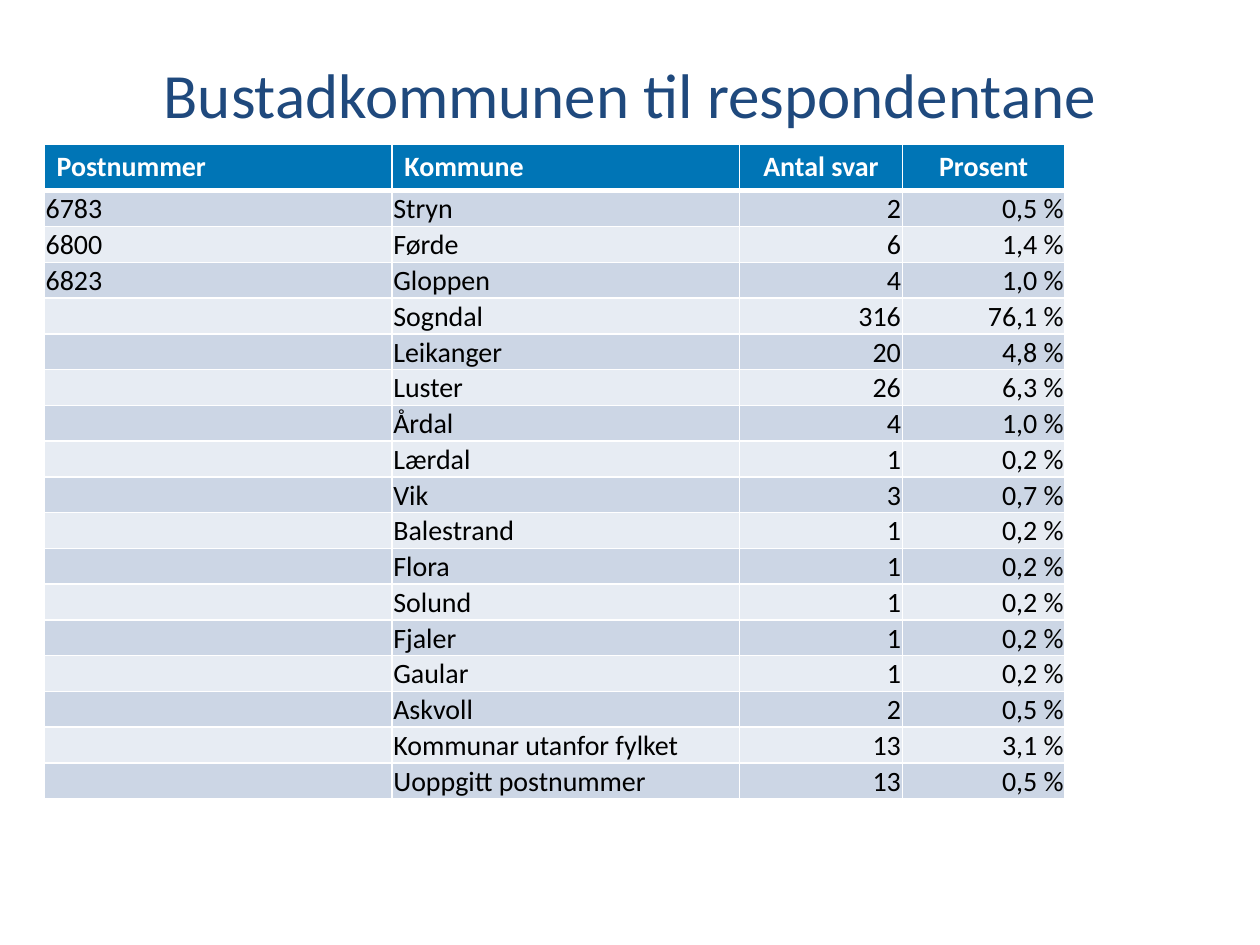
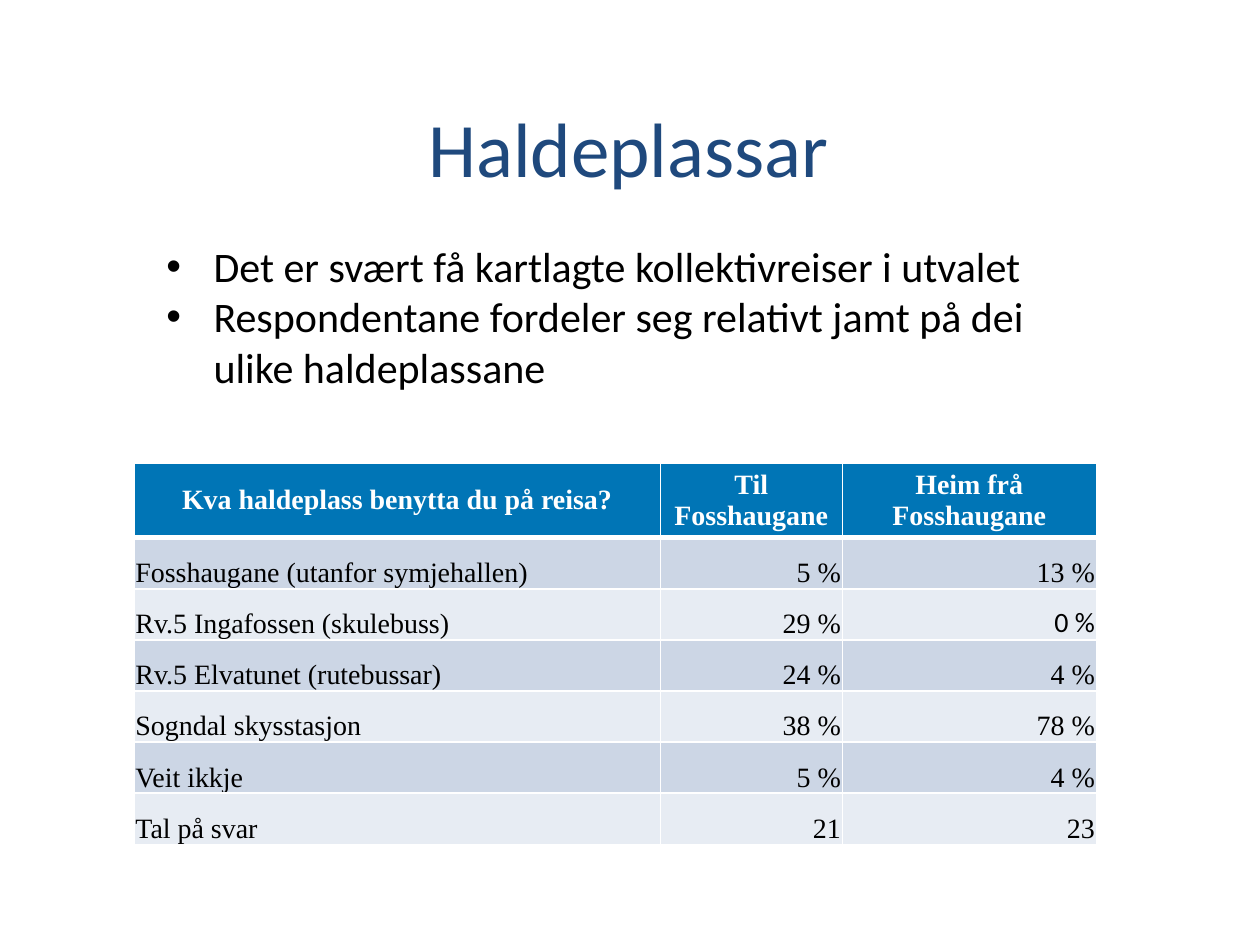
import dataclasses

import lxml.etree
import pptx
import pptx.dml.color
import pptx.enum.text
import pptx.oxml.ns
import pptx.util

Cm, Pt = pptx.util.Cm, pptx.util.Pt
ALIGN = pptx.enum.text.PP_ALIGN
ANCHOR = pptx.enum.text.MSO_ANCHOR

NAVY, BLUE, WHITE, BLACK = "1F497D", "0075B6", "FFFFFF", "000000"
BANDS = ("CCD6E5", "E7ECF3")
SANS, SERIF = "Calibri", "Times New Roman"
SIZE = 16
PAD = Cm(0.03)


@dataclasses.dataclass
class Box:
    left: float
    top: float
    width: float
    height: float


@dataclasses.dataclass
class Column:
    head: str
    width: float
    side: ALIGN = ALIGN.RIGHT
    top: ALIGN = ALIGN.CENTER


@dataclasses.dataclass
class Grid:
    left: float
    top: float
    first: float
    step: float
    face: str
    anchor: ANCHOR
    cols: list[Column]
    rows: list[tuple[str, ...]]
    faces: dict[str, str] = dataclasses.field(default_factory=dict)


TOWNS = Grid(
    0.89, 2.9, 0.88, 0.72, SANS, ANCHOR.BOTTOM,
    [
        Column("Postnummer", 7.01, ALIGN.LEFT, ALIGN.LEFT),
        Column("Kommune", 7.01, ALIGN.LEFT, ALIGN.LEFT),
        Column("Antal svar", 3.28),
        Column("Prosent", 3.28),
    ],
    [
        ("6783", "Stryn", "2", "0,5 %"),
        ("6800", "Førde", "6", "1,4 %"),
        ("6823", "Gloppen", "4", "1,0 %"),
        ("", "Sogndal", "316", "76,1 %"),
        ("", "Leikanger", "20", "4,8 %"),
        ("", "Luster", "26", "6,3 %"),
        ("", "Årdal", "4", "1,0 %"),
        ("", "Lærdal", "1", "0,2 %"),
        ("", "Vik", "3", "0,7 %"),
        ("", "Balestrand", "1", "0,2 %"),
        ("", "Flora", "1", "0,2 %"),
        ("", "Solund", "1", "0,2 %"),
        ("", "Fjaler", "1", "0,2 %"),
        ("", "Gaular", "1", "0,2 %"),
        ("", "Askvoll", "2", "0,5 %"),
        ("", "Kommunar utanfor fylket", "13", "3,1 %"),
        ("", "Uoppgitt postnummer", "13", "0,5 %"),
    ],
)

STOPS = Grid(
    2.7, 9.33, 1.5, 1.03, SERIF, ANCHOR.MIDDLE,
    [
        Column("Kva haldeplass benytta du på reisa?", 10.61, ALIGN.LEFT),
        Column("Til Fosshaugane", 3.67),
        Column("Heim frå Fosshaugane", 5.12),
    ],
    [
        ("Fosshaugane (utanfor symjehallen)", "5 %", "13 %"),
        ("Rv.5 Ingafossen (skulebuss)", "29 %", "0 %"),
        ("Rv.5 Elvatunet (rutebussar)", "24 %", "4 %"),
        ("Sogndal skysstasjon", "38 %", "78 %"),
        ("Veit ikkje", "5 %", "4 %"),
        ("Tal på svar", "21", "23"),
    ],
    {"0 %": SANS},
)

POINTS = [
    "Det er svært få kartlagte kollektivreiser i utvalet",
    "Respondentane fordeler seg relativt jamt på dei ulike haldeplassane",
]


def paint(hue: str) -> pptx.dml.color.RGBColor:
    return pptx.dml.color.RGBColor.from_string(hue)


def style(para, face: str, size: float, hue: str, bold: bool = False) -> None:
    for run in para.runs:
        run.font.name, run.font.size, run.font.bold = face, Pt(size), bold
        run.font.color.rgb = paint(hue)


def node(root, tag: str, **attrs: str):
    return lxml.etree.SubElement(root, pptx.oxml.ns.qn(tag), **attrs)


def place(shape, box: Box) -> None:
    shape.left, shape.top = Cm(box.left), Cm(box.top)
    shape.width, shape.height = Cm(box.width), Cm(box.height)


def add_page(deck, layout: int, text: str, box: Box, size: float):
    """Add a slide with its title set and placed."""
    page = deck.slides.add_slide(deck.slide_layouts[layout])
    title = page.shapes.title
    place(title, box)
    title.text_frame.text = text
    para = title.text_frame.paragraphs[0]
    para.alignment = ALIGN.CENTER
    style(para, SANS, size, NAVY)
    return page


def add_list(page, box: Box, points: list[str]) -> None:
    body = page.placeholders[1]
    place(body, box)
    body.text_frame.text = "\n".join(points)
    for para in body.text_frame.paragraphs:
        props = para._p.get_or_add_pPr()
        props.set("marL", str(Cm(0.95)))
        props.set("indent", str(-Cm(0.95)))
        para.space_before = Pt(0)
        node(props, "a:buFont", typeface="Arial")
        node(props, "a:buChar", char="•")
        style(para, SANS, 24, BLACK)


def rule(cell, top: float, base: float) -> None:
    """Draw white cell borders with the given top and bottom weights."""
    props = cell._tc.get_or_add_tcPr()
    for side, weight in zip("LRTB", (1, 1, top, base)):
        line = node(props, f"a:ln{side}", w=str(Pt(weight)))
        node(node(line, "a:solidFill"), "a:srgbClr", val=WHITE)


def fill_cell(cell, text: str, grid: Grid, col: Column, row: int) -> None:
    head = row == 0
    rule(cell, 3 if row == 1 else 1, 3 if head else 1)
    cell.fill.solid()
    cell.fill.fore_color.rgb = paint(BLUE if head else BANDS[(row - 1) % 2])
    cell.vertical_anchor = grid.anchor if head else ANCHOR.BOTTOM
    if not head:
        cell.margin_left = cell.margin_right = cell.margin_top = PAD
        cell.margin_bottom = 0
    cell.text_frame.text = text
    para = cell.text_frame.paragraphs[0]
    para.alignment = col.top if head else col.side
    face = grid.faces.get(text, grid.face)
    style(para, face, SIZE, WHITE if head else BLACK, head)
    if not text:
        node(para._p, "a:endParaRPr", sz=str(SIZE * 100))


def add_grid(page, grid: Grid) -> None:
    rows = [tuple(col.head for col in grid.cols), *grid.rows]
    width = sum(col.width for col in grid.cols)
    height = grid.first + grid.step * len(grid.rows)
    table = page.shapes.add_table(
        len(rows), len(grid.cols),
        Cm(grid.left), Cm(grid.top), Cm(width), Cm(height),
    ).table
    for slot, col in zip(table.columns, grid.cols):
        slot.width = Cm(col.width)
    for r, texts in enumerate(rows):
        table.rows[r].height = Cm(grid.step if r else grid.first)
        for c, (text, col) in enumerate(zip(texts, grid.cols)):
            fill_cell(table.cell(r, c), text, grid, col, r)


def main() -> None:
    deck = pptx.Presentation()
    deck.slide_width, deck.slide_height = Cm(25.4), Cm(19.05)

    page = add_page(deck, 5, "Bustadkommunen til respondentane",
                    Box(0.5, 0.91, 24.4, 1.95), 36)
    add_grid(page, TOWNS)

    page = add_page(deck, 1, "Haldeplassar", Box(1.2, 1.98, 22.94, 1.95), 44)
    add_list(page, Box(3.1, 4.72, 19, 3.33), POINTS)
    add_grid(page, STOPS)

    deck.save("out.pptx")


if __name__ == "__main__":
    main()
